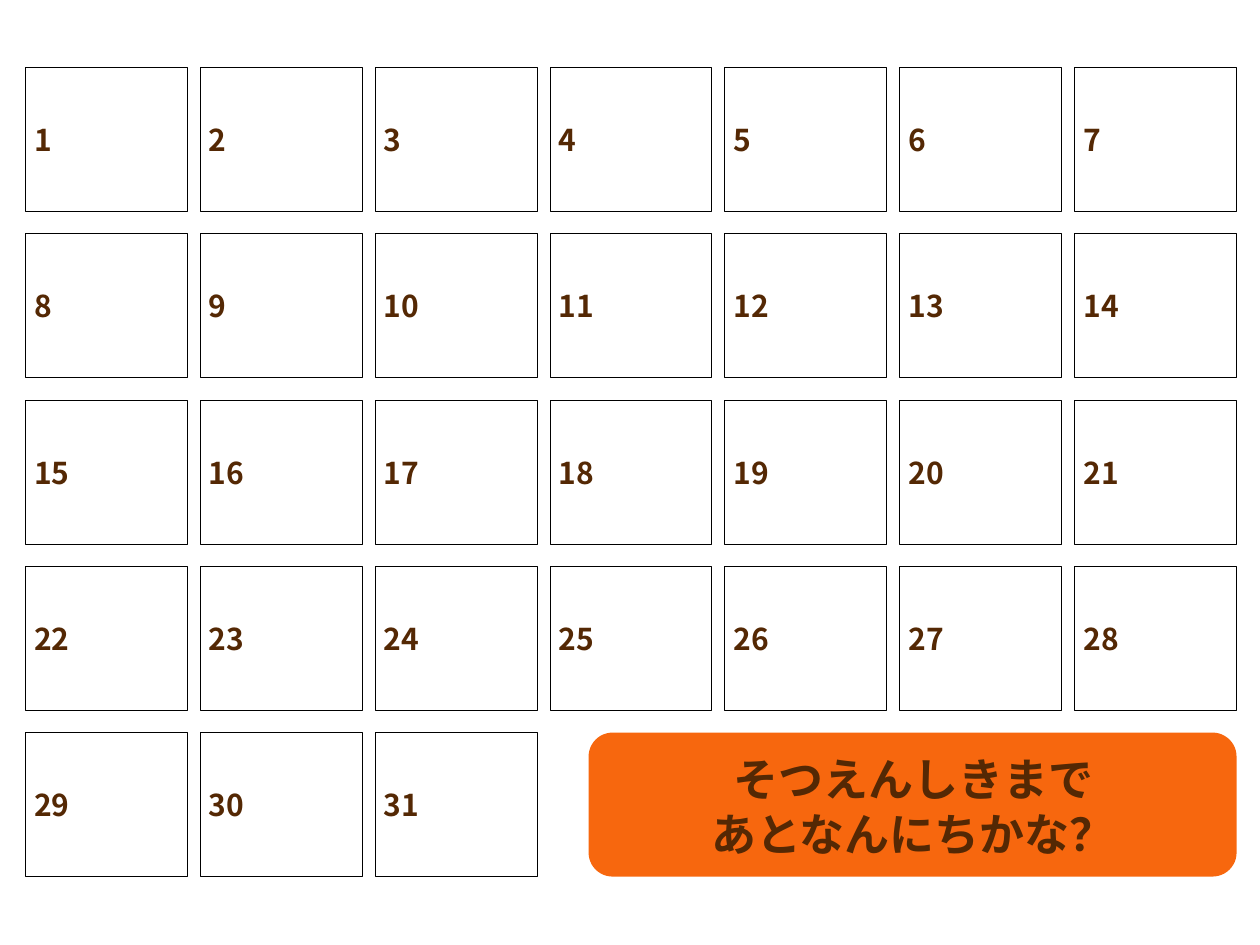
from lxml import etree
from pptx import Presentation
from pptx import util as u
from pptx.dml.color import RGBColor
from pptx.enum import shapes, text
from pptx.oxml import ns

LINES = ["そつえんしきまで", "あとなんにちかな？"]
DAYS = range(1, 32)
COLS, ROWS = 7, 5
FONT = "Noto Sans CJK JP"
BROWN = RGBColor(0x54, 0x28, 0x04)
BLACK = RGBColor(0, 0, 0)
ORANGE = RGBColor(0xF7, 0x67, 0x0E)

LEFT, TOP = 0.28, 0.75
WIDE, HIGH = 1.8, 1.6
STEP_X = (11.94 - LEFT) / (COLS - 1)
STEP_Y = (8.14 - TOP) / (ROWS - 1)
DROP = 0.55


def box(*nums):
    return [u.Inches(n) for n in nums]


def add_run(para, words, size, lead):
    para.line_spacing = u.Pt(lead)
    run = para.add_run()
    run.text = words
    font = run.font
    font.name, font.size, font.bold = FONT, u.Pt(size), True
    font.color.rgb = BROWN
    east = etree.SubElement(run._r.get_or_add_rPr(), ns.qn("a:ea"))
    east.set("typeface", FONT)


def add_cell(slide, x, y):
    cell = slide.shapes.add_shape(
        shapes.MSO_SHAPE.RECTANGLE, *box(x, y, WIDE, HIGH))
    cell.shadow.inherit = False
    cell.fill.background()
    cell.line.color.rgb = BLACK
    cell.line.width = u.Pt(0.5)


def add_day(slide, day, x, y):
    width = 0.43 if day < 10 else 0.66
    label = slide.shapes.add_textbox(*box(x, y + DROP, width, 0.5))
    frame = label.text_frame
    frame.word_wrap = False
    frame.auto_size = text.MSO_AUTO_SIZE.SHAPE_TO_FIT_TEXT
    add_run(frame.paragraphs[0], str(day), 24, 29)


def add_banner(slide):
    panel = slide.shapes.add_shape(
        shapes.MSO_SHAPE.ROUNDED_RECTANGLE, *box(6.54, 8.14, 7.2, HIGH))
    panel.shadow.inherit = False
    panel.fill.solid()
    panel.fill.fore_color.rgb = ORANGE
    panel.line.fill.background()

    title = slide.shapes.title
    title.left, title.top, title.width, title.height = box(
        7.24, 8.29, 5.81, 1.31)
    panel._element.addnext(title._element)
    frame = title.text_frame
    frame.word_wrap = True
    frame.auto_size = text.MSO_AUTO_SIZE.NONE
    frame.vertical_anchor = text.MSO_ANCHOR.MIDDLE
    for i, line in enumerate(LINES):
        para = frame.add_paragraph() if i else frame.paragraphs[0]
        para.alignment = text.PP_ALIGN.CENTER
        add_run(para, line, 36, 44)


def main():
    deck = Presentation()
    deck.slide_width, deck.slide_height = box(14, 10.5)
    slide = deck.slides.add_slide(deck.slide_layouts[5])
    for day in DAYS:
        row, col = divmod(day - 1, COLS)
        x, y = LEFT + col * STEP_X, TOP + row * STEP_Y
        add_cell(slide, x, y)
        add_day(slide, day, x, y)
    add_banner(slide)
    deck.save("out.pptx")


if __name__ == "__main__":
    main()
